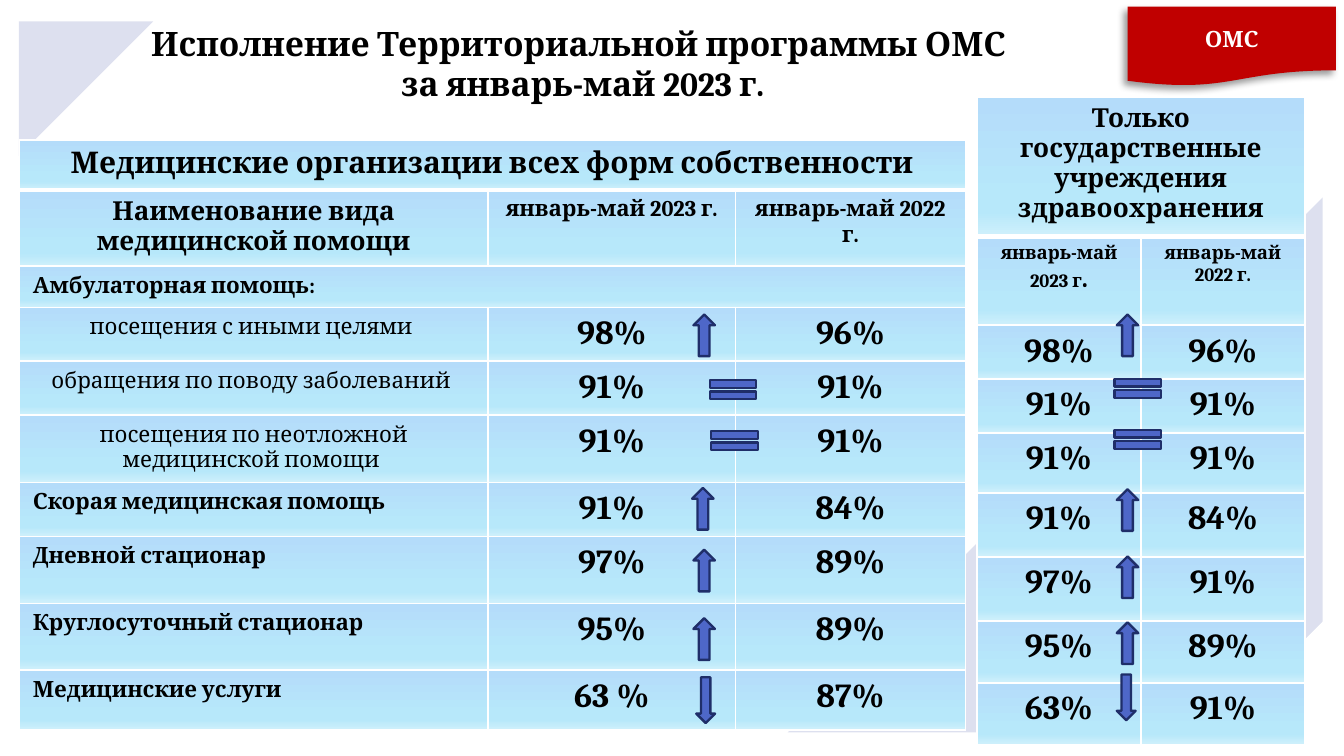
from lxml.etree import SubElement
from pptx import Presentation
from pptx.dml.color import RGBColor
from pptx.enum.shapes import MSO_SHAPE as Shape
from pptx.enum.text import MSO_ANCHOR as Anchor, MSO_AUTO_SIZE as AutoSize, PP_ALIGN as Align
from pptx.oxml.ns import qn
from pptx.util import Pt

FONT = "Cambria"
COLORS = {
    "text": "000000", "white": "FFFFFF", "flag": "C00000",
    "triangle": "5968B0", "mark": "4E67C8", "mark_line": "1F2E69",
}
CELL_GRADIENT = [(0, "B4DCFA"), (74, "B7E8FA"), (83, "B7E8FA"), (100, "CFF0FB")]

# Each trend mark: preset shape, width, height
UP = (Shape.UP_ARROW, 11.5, 22.3)
DOWN = (Shape.DOWN_ARROW, 10.1, 24.5)
EQUAL = (Shape.MATH_EQUAL, 33.8, 17.3)

# Service name, bold heading or indented item, 2023 and 2022 values
SERVICES = [
    ("посещения с иными целями ", False, "98%", "96%"),
    ("обращения по поводу заболеваний ", False, "91%", "91%"),
    ("посещения по неотложной медицинской помощи ", False, "91%", "91%"),
    ("Скорая медицинская помощь", True, "91%", "84%"),
    ("Дневной стационар", True, "97%", "89%"),
    ("Круглосуточный стационар", True, "95%", "89%"),
    ("Медицинские услуги", True, "63 %", "87%"),
]
STATE_VALUES = [
    ("98%", "96%"), ("91%", "91%"), ("91%", "91%"), ("91%", "84%"),
    ("97%", "91%"), ("95%", "89%"), ("63%", "91%"),
]
MARKS = [
    (UP, 371.5, 168.5), (EQUAL, 375.8, 200.2), (EQUAL, 376.6, 227.5), (UP, 370.8, 261.4),
    (UP, 371.5, 294.5), (UP, 371.5, 331.2), (DOWN, 373, 362.9),
    (UP, 598.3, 168.5), (EQUAL, 592.6, 199.4), (EQUAL, 592.6, 226.8), (UP, 598.3, 262.1),
    (UP, 598.3, 298.1), (UP, 598.3, 333.4), (DOWN, 598.3, 361.4),
]


def rgb(name):
    return RGBColor.from_string(COLORS[name])


def format_run(run, size, bold=True, color="text"):
    run.font.name = FONT
    run.font.size = Pt(size)
    run.font.bold = bold
    run.font.color.rgb = rgb(color)


def add_color(parent, value, alpha=None):
    color = SubElement(parent, qn("a:srgbClr"), val=value)
    if alpha is not None:
        SubElement(color, qn("a:alpha"), val=str(alpha * 1000))


def add_shape(slide, kind, left, top, width, height, fill, line=None):
    shape = slide.shapes.add_shape(kind, Pt(left), Pt(top), Pt(width), Pt(height))
    shape.shadow.inherit = False
    shape.fill.solid()
    shape.fill.fore_color.rgb = rgb(fill)
    if line:
        shape.line.color.rgb = rgb(line)
        shape.line.width = Pt(1.25)
    else:
        shape.line.fill.background()
    return shape


def add_triangle(slide, left, top, size, rotation, fill, line=None, opacity=None):
    shape = add_shape(slide, Shape.RIGHT_TRIANGLE, left, top, size, size, fill, line)
    shape.rotation = rotation
    if opacity is not None:
        color = shape._element.spPr.find(qn("a:solidFill"))[0]
        SubElement(color, qn("a:alpha"), val=str(opacity * 1000))


def add_flag(slide):
    shape = add_shape(slide, Shape.FLOWCHART_DOCUMENT, 604.1, 3.6, 111.6, 42.5, "flag")
    effects = shape._element.spPr.find(qn("a:effectLst"))
    shadow = SubElement(effects, qn("a:outerShdw"), blurRad=str(Pt(4)), dist=str(Pt(3)),
                        dir=str(135 * 60000), algn="tr", rotWithShape="0")
    add_color(shadow, COLORS["text"], 40)
    frame = shape.text_frame
    frame.text = "ОМС"
    frame.vertical_anchor = Anchor.MIDDLE
    frame.margin_left = frame.margin_right = Pt(5)
    frame.margin_top = frame.margin_bottom = Pt(2.5)
    frame.paragraphs[0].alignment = Align.CENTER
    format_run(frame.paragraphs[0].runs[0], 12, color="white")


def place_title(slide):
    title = slide.shapes.title
    title.left, title.top, title.width, title.height = Pt(12.2), Pt(8.6), Pt(563.8), Pt(51.1)
    frame = title.text_frame
    frame.text = "Исполнение Территориальной программы ОМС \vза январь-май 2023 г."
    frame.word_wrap = True
    frame.auto_size = AutoSize.SHAPE_TO_FIT_TEXT
    frame.vertical_anchor = Anchor.TOP
    paragraph = frame.paragraphs[0]
    paragraph.alignment = Align.CENTER
    paragraph._p.get_or_add_pPr().set("marL", str(Pt(36)))
    for run in paragraph.runs:
        format_run(run, 18)
    # Bring the title in front of the decoration
    slide.shapes._spTree.append(title._element)


def style_cell(cell, row):
    """White borders, thicker under the top row, and the blue gradient."""
    properties = cell._tc.get_or_add_tcPr()
    widths = {"L": 1, "R": 1, "T": 3 if row == 1 else 1, "B": 3 if row == 0 else 1}
    for side, width in widths.items():
        line = SubElement(properties, qn(f"a:ln{side}"), w=str(Pt(width)))
        add_color(SubElement(line, qn("a:solidFill")), COLORS["white"])
    gradient = SubElement(properties, qn("a:gradFill"), rotWithShape="1")
    stops = SubElement(gradient, qn("a:gsLst"))
    for position, color in CELL_GRADIENT:
        add_color(SubElement(stops, qn("a:gs"), pos=str(position * 1000)), color)
    SubElement(gradient, qn("a:lin"), ang=str(90 * 60000), scaled="0")


def write_cell(cell, text, size, bold=True, alignment=Align.CENTER):
    paragraph = cell.text_frame.paragraphs[0]
    paragraph.text = text
    paragraph.alignment = alignment
    format_run(paragraph.runs[0], size, bold)


def add_table(slide, left, top, widths, heights, merged_rows):
    table = slide.shapes.add_table(len(heights), len(widths), Pt(left), Pt(top),
                                   Pt(sum(widths)), Pt(sum(heights))).table
    table.first_row = table.horz_banding = False
    for column, width in zip(table.columns, widths):
        column.width = Pt(width)
    for index, (row, height) in enumerate(zip(table.rows, heights)):
        row.height = Pt(height)
        for cell in row.cells:
            style_cell(cell, index)
    for index in merged_rows:
        table.cell(index, 0).merge(table.cell(index, len(widths) - 1))
    return table


def add_all_table(slide):
    heights = [26.8, 40.2, 22, 28.9, 28.9, 35.9, 28.9, 35.9, 35.9, 32]
    table = add_table(slide, 10.4, 75, [251.1, 132.5, 123.2], heights, [0, 2])
    write_cell(table.cell(0, 0), "Медицинские организации всех форм собственности", 16)
    write_cell(table.cell(1, 0), "Наименование вида медицинской помощи", 14)
    write_cell(table.cell(1, 1), "январь-май 2023 г.", 12)
    write_cell(table.cell(1, 2), "январь-май 2022 г.", 12)
    write_cell(table.cell(2, 0), "Амбулаторная помощь:", 12, alignment=Align.LEFT)
    for row, (name, heading, *values) in enumerate(SERVICES, 3):
        write_cell(table.cell(row, 0), name, 12, heading, Align.LEFT if heading else Align.CENTER)
        for column, value in enumerate(values, 1):
            write_cell(table.cell(row, column), value, 18)


def add_state_table(slide):
    heights = [74.5, 47.7, 28.9, 28.9, 32.1, 34.3, 34.3, 33.2, 33.2]
    table = add_table(slide, 523.4, 52, [87.8, 87.8], heights, [0])
    write_cell(table.cell(0, 0), "Только государственные учреждения здравоохранения", 14)
    write_cell(table.cell(1, 0), "январь-май 2023 г", 10)
    period = table.cell(1, 0).text_frame.paragraphs[0].add_run()
    period.text = "."
    format_run(period, 14)
    write_cell(table.cell(1, 1), "январь-май 2022 г.", 10)
    for row, values in enumerate(STATE_VALUES, 2):
        for column, value in enumerate(values):
            write_cell(table.cell(row, column), value, 18)


def main():
    presentation = Presentation()
    presentation.slide_width, presentation.slide_height = Pt(720), Pt(405)
    slide = presentation.slides.add_slide(presentation.slide_layouts[5])

    # Corner decoration and title
    add_flag(slide)
    add_triangle(slide, 421.9, 105.8, 286.6, 270, "triangle", opacity=20)
    add_triangle(slide, 10.1, 11.5, 72, 90, "triangle", opacity=20)
    add_triangle(slide, 643.7, 326.9, 72, 270, "white", line="white")
    place_title(slide)

    # Tables
    add_all_table(slide)
    add_state_table(slide)

    # Trend marks
    for (kind, width, height), left, top in MARKS:
        add_shape(slide, kind, left, top, width, height, "mark", "mark_line")

    presentation.save("out.pptx")


if __name__ == "__main__":
    main()
